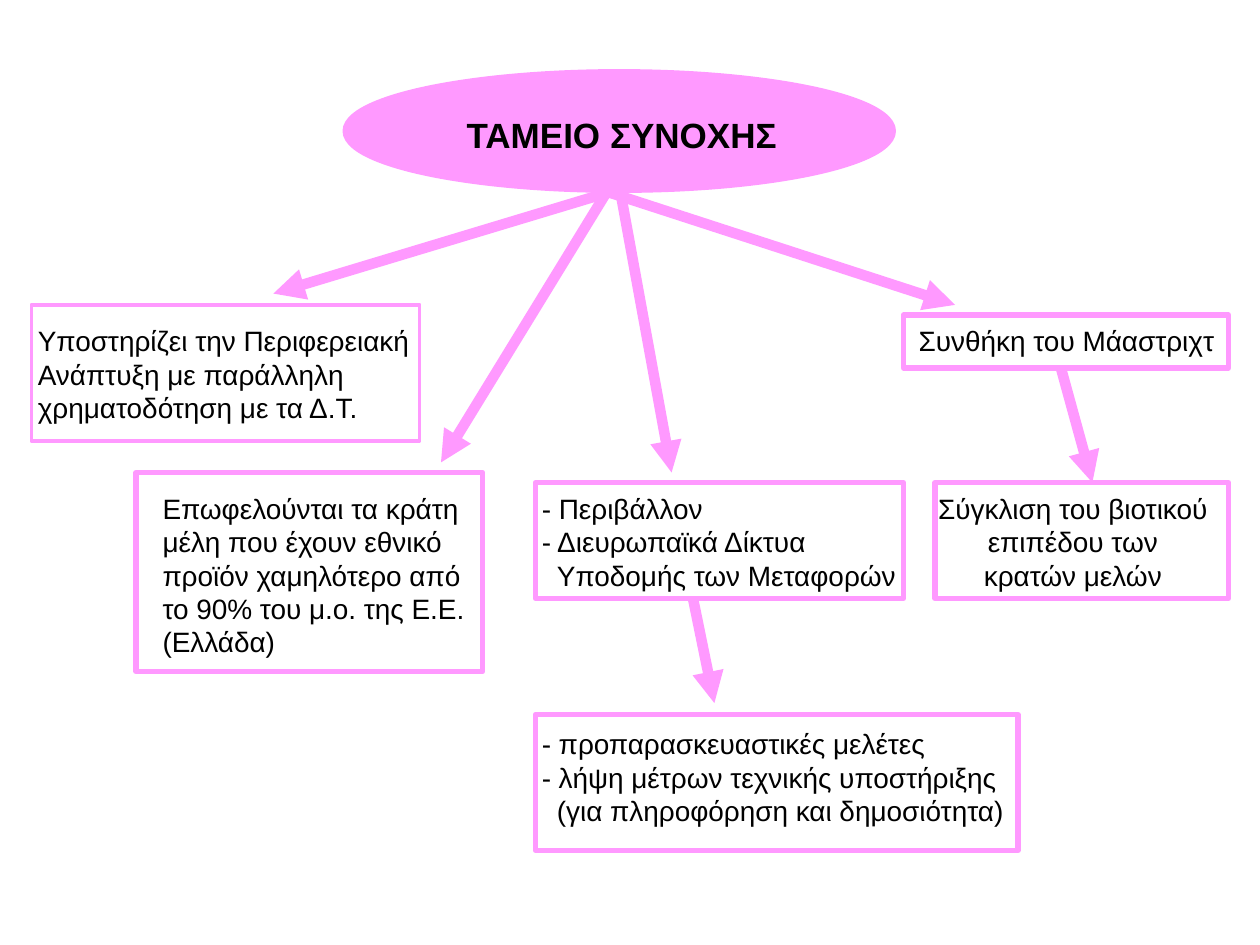
from dataclasses import dataclass

from lxml.etree import SubElement
from pptx import Presentation
from pptx.dml.color import RGBColor
from pptx.enum.shapes import MSO_CONNECTOR as Connector, MSO_SHAPE as Shape
from pptx.enum.text import MSO_ANCHOR as Anchor, PP_ALIGN as Align
from pptx.oxml.ns import qn
from pptx.util import Inches, Pt


@dataclass(frozen=True)
class Theme:
    pink: RGBColor = RGBColor(0xFF, 0x99, 0xFF)
    white: RGBColor = RGBColor(0xFF, 0xFF, 0xFF)
    black: RGBColor = RGBColor(0, 0, 0)
    font: str = "Arial"
    title_size: int = 20
    body_size: int = 16
    line_pitch: float = 19.1
    arrow_width: int = 6


THEME = Theme()
HANGING = 0.12  # indent of a line that continues a dashed item

# Box (left, top, width, height), text inset (left, top, right), lines, format
NOTES = [
    ((7.42, 3.83, 2.33, 0.92), (0, 0.07, 0.14),
     ["Σύγκλιση του βιοτικού", "επιπέδου των", "κρατών μελών"],
     {"align": Align.CENTER}),
    ((7.17, 2.5, 2.58, 0.42), (0.12, 0.07, 0), ["Συνθήκη του Μάαστριχτ"], {}),
    ((4.25, 5.67, 3.83, 1.08), (0.05, 0.1, 0),
     ["- προπαρασκευαστικές μελέτες", "- λήψη μέτρων τεχνικής υποστήριξης",
      "(για πληροφόρηση και δημοσιότητα)"], {"dashed": True}),
    ((4.25, 3.83, 2.92, 0.92), (0.05, 0.07, 0),
     ["- Περιβάλλον", "- Διευρωπαϊκά Δίκτυα", "Υποδομής των Μεταφορών"],
     {"dashed": True}),
    ((1.08, 3.75, 2.75, 1.58), (0.21, 0.15, 0),
     ["Επωφελούνται τα κράτη", "μέλη που έχουν εθνικό", "προϊόν χαμηλότερο από",
      "το 90% του μ.ο. της Ε.Ε.", "(Ελλάδα)"], {}),
    ((0.25, 2.42, 3.08, 1.08), (0.05, 0.15, 0),
     ["Υποστηρίζει την Περιφερειακή", "Ανάπτυξη με παράλληλη",
      "χρηματοδότηση με τα Δ.Τ."], {"border": 2.25}),
]

ARROWS = [
    ((4.92, 1.5), (2.17, 2.33)),
    ((4.83, 1.5), (3.5, 3.67)),
    ((4.92, 1.5), (5.33, 3.75)),
    ((4.75, 1.5), (7.58, 2.42)),
    ((5.5, 4.75), (5.67, 5.58)),
    ((8.42, 2.92), (8.67, 3.83)),
]


def write_line(para, text, *, size=THEME.body_size, bold=False, align=Align.LEFT,
               indent=0, pitch=THEME.line_pitch):
    para.alignment = align
    if pitch:
        para.line_spacing = Pt(pitch)
    if indent:
        para._p.get_or_add_pPr().set("marL", str(Inches(indent)))
    span = para.add_run()
    span.text = text
    span.font.name = THEME.font
    span.font.size = Pt(size)
    span.font.bold = bold
    span.font.color.rgb = THEME.black


def add_panel(page, kind, box, inset, *, fill, border, anchor):
    panel = page.shapes.add_shape(kind, *map(Inches, box))
    panel.shadow.inherit = False
    panel.fill.solid()
    panel.fill.fore_color.rgb = fill
    panel.line.color.rgb = THEME.pink
    panel.line.width = Pt(border)
    frame = panel.text_frame
    frame.word_wrap = True
    frame.vertical_anchor = anchor
    frame.margin_left, frame.margin_top, frame.margin_right = map(Inches, inset)
    frame.margin_bottom = 0
    return frame


def add_title(page, box, text):
    frame = add_panel(page, Shape.OVAL, box, (0.04, 0.05, 0),
                      fill=THEME.pink, border=4.5, anchor=Anchor.MIDDLE)
    write_line(frame.paragraphs[0], text, size=THEME.title_size, bold=True,
               align=Align.CENTER, pitch=None)


def add_note(page, box, inset, lines, *, align=Align.LEFT, dashed=False, border=3):
    frame = add_panel(page, Shape.RECTANGLE, box, inset,
                      fill=THEME.white, border=border, anchor=Anchor.TOP)
    for index, text in enumerate(lines):
        para = frame.add_paragraph() if index else frame.paragraphs[0]
        continues = dashed and not text.startswith("-")
        write_line(para, text, align=align, indent=HANGING if continues else 0)


def add_arrow(page, start, end):
    arrow = page.shapes.add_connector(Connector.STRAIGHT, *map(Inches, start + end))
    arrow.line.color.rgb = THEME.pink
    arrow.line.width = Pt(THEME.arrow_width)
    SubElement(arrow.line._get_or_add_ln(), qn("a:tailEnd"), type="triangle")
    SubElement(arrow._element.spPr, qn("a:effectLst"))


def main():
    deck = Presentation()
    deck.slide_width, deck.slide_height = Inches(10), Inches(7.5)
    page = deck.slides.add_slide(deck.slide_layouts[6])

    # Notes, then the heading ellipse
    for box, inset, lines, style in NOTES:
        add_note(page, box, inset, lines, **style)
    add_title(page, (2.75, 0.58, 4.33, 0.92), "ΤΑΜΕΙΟ ΣΥΝΟΧΗΣ")

    # Arrows over the boxes
    for start, end in ARROWS:
        add_arrow(page, start, end)

    deck.save("out.pptx")


if __name__ == "__main__":
    main()
